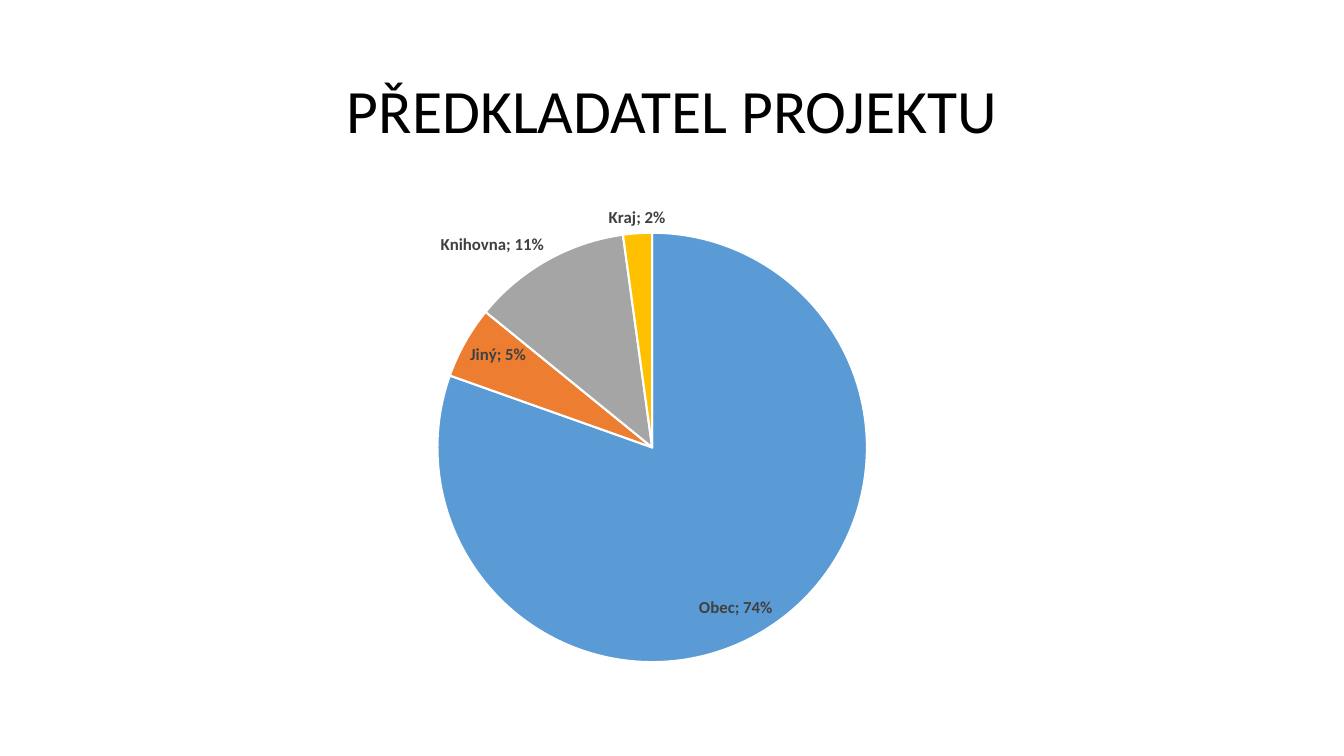
from lxml import etree
from pptx import Presentation
from pptx.chart.data import CategoryChartData
from pptx.dml.color import RGBColor
from pptx.enum.chart import XL_CHART_TYPE, XL_LABEL_POSITION
from pptx.enum.text import MSO_ANCHOR, PP_ALIGN
from pptx.oxml import parse_xml
from pptx.oxml.ns import qn
from pptx.util import Inches, Pt

PIE = XL_CHART_TYPE.PIE
INSIDE = XL_LABEL_POSITION.INSIDE_END
OUTSIDE = XL_LABEL_POSITION.OUTSIDE_END
MIDDLE = MSO_ANCHOR.MIDDLE
CENTER = PP_ALIGN.CENTER
CHART_NS = "http://schemas.openxmlformats.org/drawingml/2006/chart"
FONT = "Calibri"
SUBMITTERS = [
    ("Obec", 0.74, "5B9BD5", INSIDE),
    ("Jiný", 0.05, "ED7D31", INSIDE),
    ("Knihovna", 0.11, "A5A5A5", OUTSIDE),
    ("Kraj", 0.02, "FFC000", OUTSIDE),
]


def color(value):
    """Turn a hex string into a colour."""
    return RGBColor.from_string(value)


def style_font(font, size, value, bold=False):
    """Set the face, size, colour and weight of a font."""
    font.name = FONT
    font.size = Pt(size)
    font.bold = bold
    font.color.rgb = color(value)


def add_title(page, left, top, width, height, text):
    """Add the centred page title."""
    box = page.shapes.add_textbox(Inches(left), Inches(top), Inches(width), Inches(height))
    frame = box.text_frame
    frame.word_wrap = True
    frame.vertical_anchor = MIDDLE
    para = frame.paragraphs[0]
    para.text = text
    para.alignment = CENTER
    para.line_spacing = 0.9
    style_font(para.font, 44, "000000")


def place_plot(chart, x, y, width, height):
    """Fix the inner plot area as fractions of the chart."""
    fractions = {"x": x, "y": y, "w": width, "h": height}
    modes = '<c:xMode val="edge"/><c:yMode val="edge"/>'
    sizes = "".join(f'<c:{key} val="{value}"/>' for key, value in fractions.items())
    layout = parse_xml(
        f'<c:layout xmlns:c="{CHART_NS}"><c:manualLayout>'
        f'<c:layoutTarget val="inner"/>{modes}{sizes}</c:manualLayout></c:layout>'
    )
    plot_area = chart._chartSpace.find(".//" + qn("c:plotArea"))
    for old_layout in plot_area.findall(qn("c:layout")):
        plot_area.remove(old_layout)
    plot_area.insert(0, layout)


def add_submitter_pie(page, left, top, width, height):
    """Add the pie of project submitters with its labels."""
    chart_data = CategoryChartData(number_format="0%")
    chart_data.categories = [name for name, *_ in SUBMITTERS]
    chart_data.add_series("Series 1", [share for _, share, *_ in SUBMITTERS])
    frame = page.shapes.add_chart(
        PIE, Inches(left), Inches(top), Inches(width), Inches(height), chart_data
    )
    chart = frame.chart
    chart.has_legend = False
    chart.has_title = False
    style_font(chart.font, 10, "000000")
    place_plot(chart, 0.297, 0.065, 0.371, 0.895)
    plot = chart.plots[0]
    plot.vary_by_categories = True
    series = plot.series[0]
    for index, (_, _, fill, position) in enumerate(SUBMITTERS):
        point = series.points[index]
        point.format.fill.solid()
        point.format.fill.fore_color.rgb = color(fill)
        point.format.line.color.rgb = color("FFFFFF")
        point.format.line.width = Pt(1.5)
        style_font(point.data_label.font, 12, "404040", bold=True)
        point.data_label.position = position
    for label in chart._chartSpace.iter(qn("c:dLbl")):
        label.find(qn("c:showCatName")).set("val", "1")
        etree.SubElement(label, qn("c:separator")).text = "; "


def main():
    """Build and save the deck."""
    deck = Presentation()
    deck.slide_width = Inches(13.33)
    deck.slide_height = Inches(7.5)
    page = deck.slides.add_slide(deck.slide_layouts[6])
    add_title(page, 0.92, 0.4, 11.5, 1.45, "PŘEDKLADATEL PROJEKTU")
    add_submitter_pie(page, 0.92, 2, 11.5, 4.76)
    deck.save("out.pptx")


if __name__ == "__main__":
    main()
